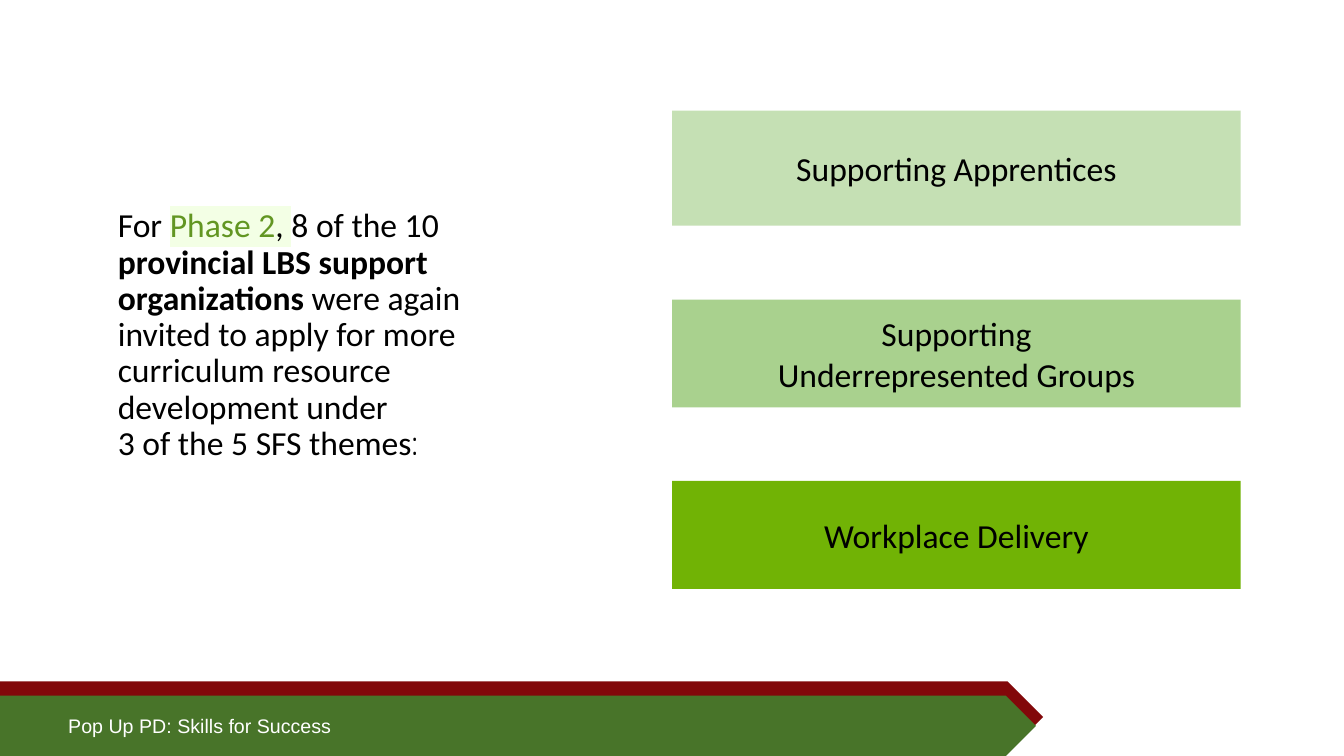
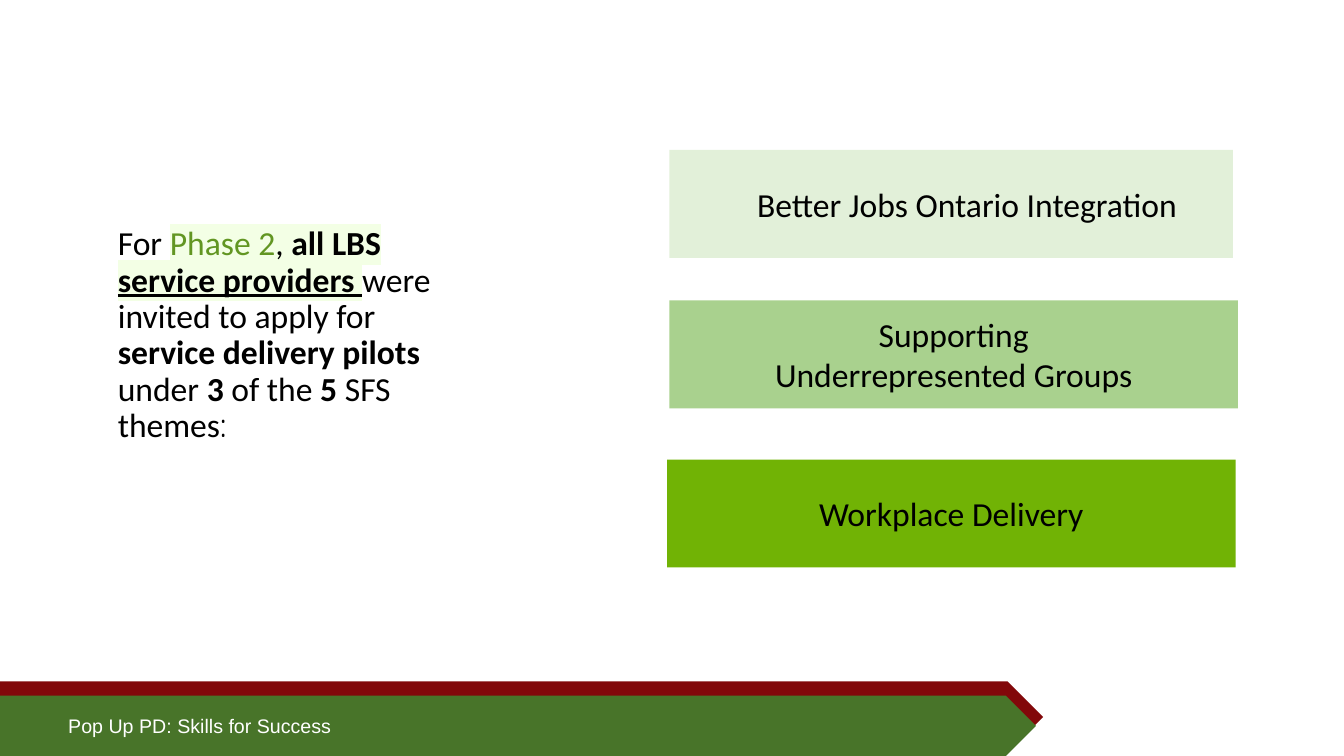
"""Build two slides on the Phase 2 invitations and their themes."""
import pptx
import pptx.dml.color
import pptx.enum.shapes
import pptx.enum.text
import pptx.oxml
import pptx.oxml.ns
import pptx.util

Cm = pptx.util.Cm
Rgb = pptx.dml.color.RGBColor.from_string
Kind = pptx.enum.shapes.MSO_SHAPE
Align = pptx.enum.text.PP_ALIGN
Anchor = pptx.enum.text.MSO_ANCHOR

theme = {
    "red": "82080A", "green": "487429", "white": "FFFFFF", "black": "000000",
    "accent": "629622", "glow": "F3FFE5",
    "pale": "E2F0D9", "light": "C5E0B4", "mid": "A9D18E", "vivid": "71B305",
    "body": 24, "foot": 14, "font": "Calibri", "plain": "Arial", "colon": "Quicksand",
}


def write(frame, paras, size="body", font="font", color="black",
          align=Align.LEFT, anchor=Anchor.MIDDLE, space=1.0):
    """Fill a text frame with paragraphs, each a list of (text, format) runs."""
    frame.word_wrap = True
    frame.vertical_anchor = anchor
    for num, runs in enumerate(paras):
        para = frame.add_paragraph() if num else frame.paragraphs[0]
        para.alignment = align
        para.line_spacing = space
        for text, look in runs:
            if text == "\n":
                para.add_line_break()
                continue
            run = para.add_run()
            run.text = text
            run.font.size = pptx.util.Pt(theme[size])
            run.font.name = theme[look.get("font", font)]
            run.font.color.rgb = Rgb(theme[look.get("color", color)])
            run.font.bold = look.get("bold", False)
            run.font.underline = look.get("under", False)
            if "glow" in look:
                mark = pptx.oxml.parse_xml(
                    f'<a:highlight {pptx.oxml.ns.nsdecls("a")}>'
                    f'<a:srgbClr val="{theme[look["glow"]]}"/></a:highlight>')
                fill = run.font._element.find(pptx.oxml.ns.qn("a:solidFill"))
                fill.addnext(mark)


def block(slide, kind, left, top, width, height, color):
    """Add a flat filled shape without line or shadow."""
    shape = slide.shapes.add_shape(kind, Cm(left), Cm(top), Cm(width), Cm(height))
    shape.shadow.inherit = False
    shape.fill.solid()
    shape.fill.fore_color.rgb = Rgb(theme[color])
    shape.line.fill.background()
    return shape


bold = {"bold": True}
glow = {"glow": "glow"}
phase = [("For ", {}), ("Phase 2", {"color": "accent", **glow}), (",", glow)]
colon = (":", {"font": "colon"})
groups = ["Supporting", "Underrepresented Groups"]
pages = [
    {
        "lead": phase + [
            (" ", glow), ("8 of the 10 ", {}),
            ("provincial LBS support organizations ", bold),
            ("were again invited to apply for more curriculum resource development under ", {}),
            ("\n", {}), ("3 of the 5 SFS themes", {}), colon],
        "cards": [
            (16.94, 2.79, 14.33, 2.9, "light", ["Supporting Apprentices"], 0),
            (16.94, 7.55, 14.33, 2.72, "mid", groups, 0),
            (16.94, 12.12, 14.33, 2.72, "vivid", ["Workplace Delivery"], 0),
        ],
    },
    {
        "lead": phase + [
            (" all LBS ", {**bold, **glow}),
            ("service providers ", {**bold, **glow, "under": True}),
            ("were invited to apply for ", {}), ("service delivery pilots ", bold),
            ("under", {}), (" 3", bold), (" of the ", {}), ("5", bold),
            (" SFS themes", {}), colon],
        "cards": [
            (16.87, 3.78, 14.2, 2.72, "pale", ["Better Jobs Ontario Integration"], 0.8),
            (16.87, 7.57, 14.33, 2.72, "mid", groups, 0),
            (16.81, 11.58, 14.33, 2.72, "vivid", ["Workplace Delivery"], 0),
        ],
    },
]
bands = [(17.17, 26.29, 1.8, "red"), (17.53, 26.11, 1.52, "green")]

deck = pptx.Presentation()
deck.slide_width, deck.slide_height = Cm(33.87), Cm(19.05)

for page in pages:
    slide = deck.slides.add_slide(deck.slide_layouts[6])
    for top, width, height, color in bands:
        block(slide, Kind.PENTAGON, 0, top, width, height, color)
    foot = slide.shapes.add_textbox(Cm(1.47), Cm(17.86), Cm(17.7), Cm(0.86))
    write(foot.text_frame, [[("Pop Up PD: Skills for Success", {})]],
          size="foot", font="plain", color="white", anchor=Anchor.TOP)
    lead = slide.shapes.add_textbox(Cm(2.72), Cm(3.43), Cm(9.6), Cm(10.06))
    write(lead.text_frame, [page["lead"]], space=0.9)
    for left, top, width, height, color, lines, shift in page["cards"]:
        card = block(slide, Kind.RECTANGLE, left, top, width, height, color)
        card.text_frame.margin_left = Cm(0.25 + shift)
        write(card.text_frame, [[(line, {})] for line in lines], align=Align.CENTER)

deck.save("out.pptx")
